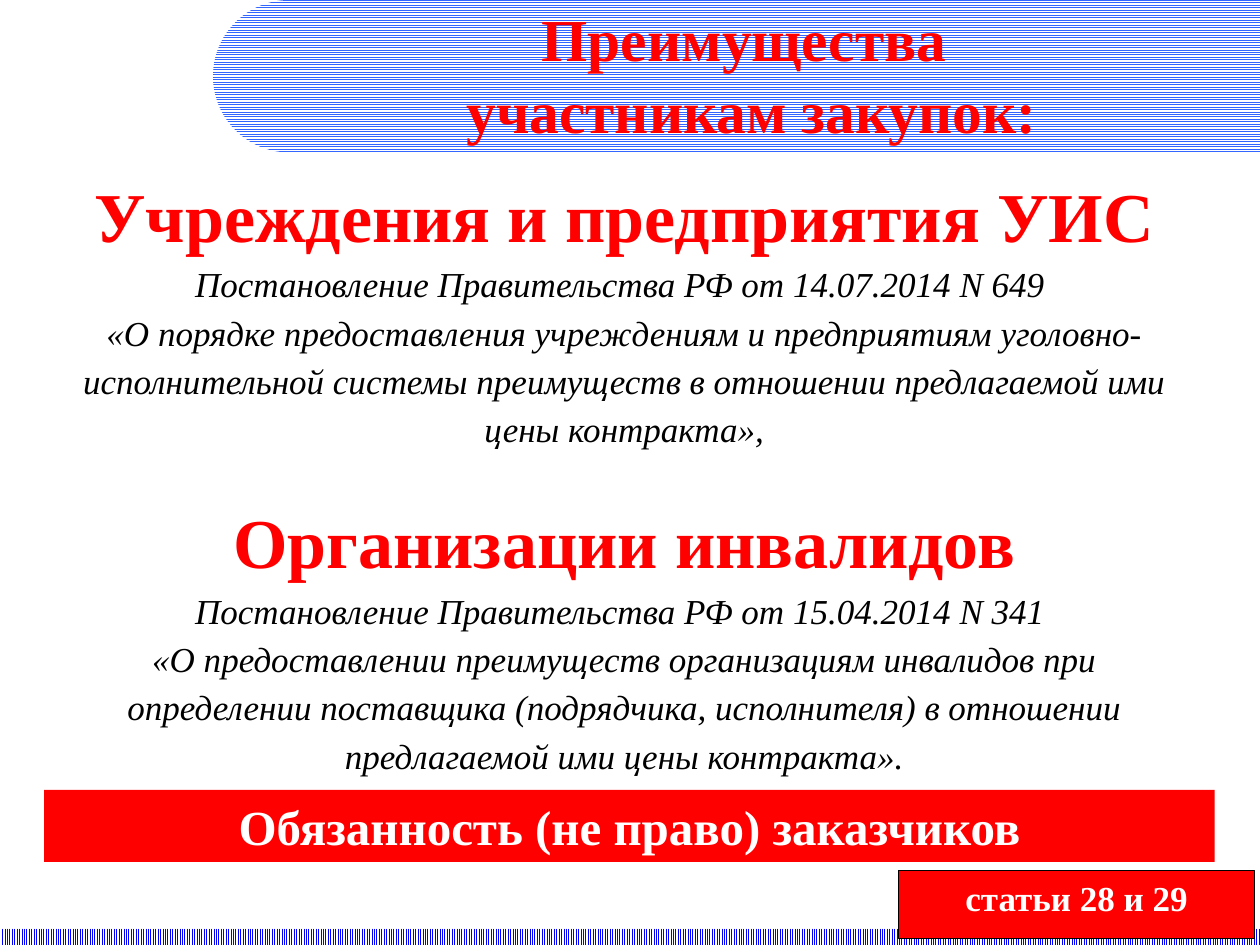
from math import cos, pi, sin

from pptx import Presentation
from pptx.dml.color import RGBColor
from pptx.enum.dml import MSO_PATTERN_TYPE as Pattern
from pptx.enum.shapes import MSO_SHAPE as Shape
from pptx.enum.text import MSO_ANCHOR as Anchor, PP_ALIGN as Align
from pptx.util import Inches, Pt

COLUMNS, ROWS = 100, 75
CELL = Inches(10) // COLUMNS
COLORS = {
    "red": "FF0000",
    "black": "000000",
    "white": "FFFFFF",
    "band": "3366FF",
    "footer": "0000FF",
}
HEADING = {"size": 40, "bold": True, "color": "red"}
DECREE = {"size": 20, "italic": True, "color": "black"}
TITLE = {"size": 34, "bold": True, "color": "red"}
DUTY = {"size": 28, "bold": True, "color": "white"}
ARTICLES = {"size": 20, "bold": True, "color": "white"}

BENEFITS = [
    (
        "Учреждения и предприятия УИС",
        "Постановление Правительства РФ от 14.07.2014 N 649 ",
        "«О порядке предоставления учреждениям и предприятиям "
        "уголовно-исполнительной системы преимуществ в отношении "
        "предлагаемой ими цены контракта»,",
    ),
    (
        "Организации инвалидов",
        "Постановление Правительства РФ от 15.04.2014 N 341 ",
        "«О предоставлении преимуществ организациям инвалидов при "
        "определении поставщика (подрядчика, исполнителя) в отношении "
        "предлагаемой ими цены контракта».",
    ),
]


def rgb(name):
    return RGBColor.from_string(COLORS[name])


def cells(*counts):
    """Turn counts of grid cells into lengths."""
    return [round(count * CELL) for count in counts]


def fill_pattern(shape, pattern, color):
    shape.shadow.inherit = False
    shape.line.fill.background()
    shape.fill.patterned()
    shape.fill.pattern = pattern
    shape.fill.fore_color.rgb = rgb(color)
    shape.fill.back_color.rgb = rgb("white")


def add_title_band(page, left, height, steps=48):
    """Draw a band that is round on the left and runs off to the right edge."""
    radius = height / 2
    angles = [pi / 2 + pi * step / steps for step in range(steps + 1)]
    arc = [
        cells(left + radius + radius * cos(angle), radius - radius * sin(angle))
        for angle in angles
    ]
    builder = page.shapes.build_freeform(*cells(COLUMNS, 0))
    builder.add_line_segments(arc + [cells(COLUMNS, height)], close=True)
    fill_pattern(builder.convert_to_shape(), Pattern.NARROW_HORIZONTAL, "band")


def add_footer_strip(page, height):
    strip = page.shapes.add_shape(
        Shape.RECTANGLE, *cells(0, ROWS - height, COLUMNS, height)
    )
    fill_pattern(strip, Pattern.NARROW_VERTICAL, "footer")


def write_lines(box, lines):
    """Fill a box with centred (text, font format, paragraph format) lines."""
    frame = box.text_frame
    frame.word_wrap = True
    frame.vertical_anchor = Anchor.TOP
    for index, (text, font_format, para_format) in enumerate(lines):
        para = frame.add_paragraph() if index else frame.paragraphs[0]
        for key, value in {"alignment": Align.CENTER, **para_format}.items():
            setattr(para, key, value)
        span = para.add_run()
        span.text = text
        values = {"name": "Times New Roman", "bold": False, "italic": False}
        values.update(font_format, size=Pt(font_format["size"]))
        span.font.color.rgb = rgb(values.pop("color"))
        for key, value in values.items():
            setattr(span.font, key, value)


def add_text(page, area, lines):
    write_lines(page.shapes.add_textbox(*cells(*area)), lines)


def add_red_label(page, area, text, font_format, outlined=False):
    label = page.shapes.add_shape(Shape.RECTANGLE, *cells(*area))
    label.shadow.inherit = False
    label.fill.solid()
    label.fill.fore_color.rgb = rgb("red")
    if outlined:
        label.line.color.rgb = rgb("black")
        label.line.width = Pt(0.75)
    else:
        label.line.fill.background()
    write_lines(label, [(text, font_format, {})])


def benefit_lines():
    lines = []
    for index, texts in enumerate(BENEFITS):
        for text, font_format in zip(texts, (HEADING, DECREE, DECREE)):
            para_format = {"line_spacing": 1.15}
            if index and font_format is HEADING:
                para_format["space_before"] = Pt(21)
            lines.append((text, font_format, para_format))
    return lines


def main():
    deck = Presentation()
    deck.slide_width, deck.slide_height = cells(COLUMNS, ROWS)
    page = deck.slides.add_slide(deck.slide_layouts[6])

    add_title_band(page, left=16.9, height=12.1)
    add_footer_strip(page, height=1.3)
    add_text(page, (3.5, 12.2, 92.1, 51.3), benefit_lines())
    add_red_label(page, (71.3, 69.1, 28.3, 5.4), "статьи 28 и 29", ARTICLES, True)
    add_red_label(
        page, (3.5, 62.7, 92.9, 5.7), "Обязанность (не право) заказчиков", DUTY
    )
    title = ("Преимущества ", "участникам закупок:")
    add_text(page, (20.1, -0.3, 79.1, 12.5), [(text, TITLE, {}) for text in title])

    deck.save("out.pptx")


if __name__ == "__main__":
    main()
